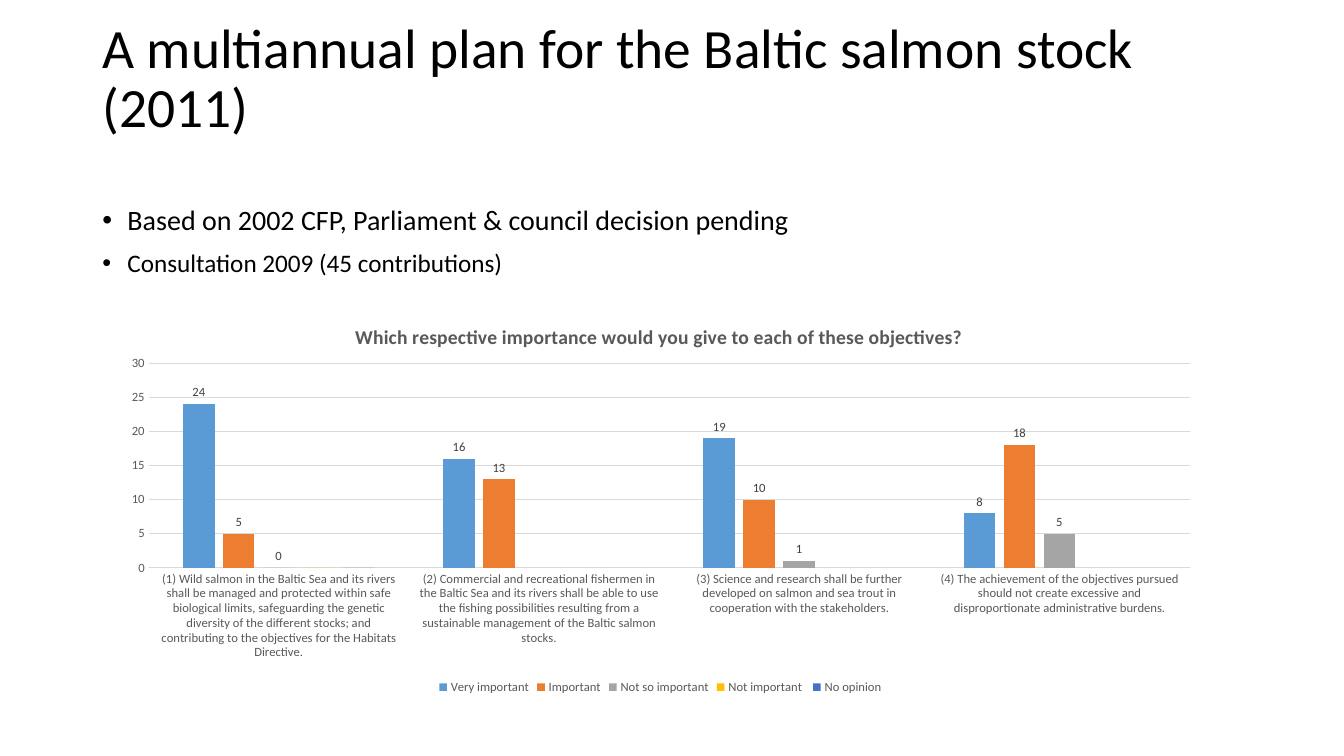
from lxml.etree import SubElement
from pptx import Presentation
from pptx.chart.data import CategoryChartData
from pptx.dml.color import RGBColor
from pptx.enum.chart import XL_CHART_TYPE, XL_LABEL_POSITION, XL_LEGEND_POSITION, XL_TICK_MARK
from pptx.enum.text import MSO_ANCHOR
from pptx.oxml import parse_xml
from pptx.oxml.ns import nsdecls, qn
from pptx.util import Pt

FONT = "Calibri"
BLACK = RGBColor(0x00, 0x00, 0x00)
DARK_GREY = RGBColor(0x40, 0x40, 0x40)
GREY = RGBColor(0x59, 0x59, 0x59)
LIGHT_GREY = RGBColor(0xD9, 0xD9, 0xD9)
BLUE = RGBColor(0x5B, 0x9B, 0xD5)
ORANGE = RGBColor(0xED, 0x7D, 0x31)
SILVER = RGBColor(0xA5, 0xA5, 0xA5)
YELLOW = RGBColor(0xFF, 0xC0, 0x00)
NAVY = RGBColor(0x44, 0x72, 0xC4)

HEADING = "A multiannual plan for the Baltic salmon stock (2011)\v"
POINTS = [
    ("Based on 2002 CFP, Parliament & council decision pending", 20),
    ("Consultation 2009 (45 contributions)", 18),
]
QUESTION = "Which respective importance would you give to each of these objectives?"
OBJECTIVES = [
    "(1) Wild salmon in the Baltic Sea and its rivers shall be managed and protected "
    "within safe biological limits, safeguarding the genetic diversity of the different "
    "stocks; and contributing to the objectives for the Habitats Directive.",
    "(2) Commercial and recreational fishermen in the Baltic Sea and its rivers shall be "
    "able to use the fishing possibilities resulting from a sustainable management of "
    "the Baltic salmon stocks.",
    "(3) Science and research shall be further developed on salmon and sea trout in "
    "cooperation with the stakeholders.",
    "(4) The achievement of the objectives pursued should not create excessive and "
    "disproportionate administrative burdens.",
]
# Answer, votes per objective, colour, whether values are labelled
ANSWERS = [
    ("Very important", (24, 16, 19, 8), BLUE, True),
    ("Important", (5, 13, 10, 18), ORANGE, True),
    ("Not so important", (0, None, 1, 5), SILVER, True),
    ("Not important ", (0, None, None, None), YELLOW, False),
    ("No opinion", (0, None, None, None), NAVY, False),
]


def set_font(font, size, colour, bold=False):
    font.name = FONT
    font.size = Pt(size)
    font.bold = bold
    font.color.rgb = colour


def add_text_frame(slide, box, anchor):
    frame = slide.shapes.add_textbox(*map(Pt, box)).text_frame
    frame.word_wrap = True
    frame.vertical_anchor = anchor
    return frame


def add_heading(slide, box):
    heading = add_text_frame(slide, box, MSO_ANCHOR.MIDDLE).paragraphs[0]
    heading.text = HEADING
    heading.line_spacing = 0.9
    set_font(heading.font, 39.6, BLACK)


def add_points(slide, box):
    frame = add_text_frame(slide, box, MSO_ANCHOR.TOP)
    for index, (wording, size) in enumerate(POINTS):
        point = frame.add_paragraph() if index else frame.paragraphs[0]
        point.text = wording
        point.line_spacing = 0.9
        point.space_before = Pt(10)
        set_font(point.font, size, BLACK)
        # Hanging bullet
        properties = point._p.get_or_add_pPr()
        properties.set("marL", str(Pt(18)))
        properties.set("indent", str(Pt(-18)))
        SubElement(properties, qn("a:buFont")).set("typeface", "Arial")
        SubElement(properties, qn("a:buChar")).set("char", "•")


def place(part, index, target="", **fractions):
    """Give a chart part a fixed place, in fractions of the chart."""
    for layout in part.findall(qn("c:layout")):
        part.remove(layout)
    target = f'<c:layoutTarget val="{target}"/>' if target else ""
    modes = "".join(f'<c:{axis}Mode val="edge"/>' for axis in "xy")
    values = "".join(f'<c:{key} val="{value}"/>' for key, value in fractions.items())
    part.insert(index, parse_xml(
        f'<c:layout {nsdecls("c")}><c:manualLayout>{target}{modes}{values}'
        "</c:manualLayout></c:layout>"))


def style_axes(chart):
    for axis in (chart.category_axis, chart.value_axis):
        axis.major_tick_mark = axis.minor_tick_mark = XL_TICK_MARK.NONE
        set_font(axis.tick_labels.font, 9, GREY)
    votes = chart.value_axis
    votes.minimum_scale, votes.maximum_scale, votes.major_unit = 0, 30, 5
    votes.format.line.fill.background()
    votes.has_major_gridlines = True
    for line in (chart.category_axis.format.line, votes.major_gridlines.format.line):
        line.color.rgb = LIGHT_GREY
        line.width = Pt(0.75)


def style_answers(plot):
    plot.gap_width, plot.overlap = 219, -27
    plot.vary_by_categories = False
    for answer, (_, _, colour, labelled) in zip(plot.series, ANSWERS):
        answer.format.fill.solid()
        answer.format.fill.fore_color.rgb = colour
        answer.invert_if_negative = False
        if labelled:
            labels = answer.data_labels
            labels.show_value = True
            labels.position = XL_LABEL_POSITION.OUTSIDE_END
            set_font(labels.font, 9, DARK_GREY)


def add_survey_chart(slide, box):
    survey = CategoryChartData()
    survey.categories = OBJECTIVES
    for answer, votes, _, _ in ANSWERS:
        survey.add_series(answer, votes)
    chart = slide.shapes.add_chart(
        XL_CHART_TYPE.COLUMN_CLUSTERED, *map(Pt, box), survey).chart
    set_font(chart.font, 10, BLACK)

    # Question above the columns
    chart.has_title = True
    question = chart.chart_title.text_frame.paragraphs[0]
    question.text = QUESTION
    set_font(question.font, 14, GREY, bold=True)
    place(chart.chart_title._element, 1, x=0.22, y=0.05)

    # Columns and axes
    place(chart._chartSpace.chart.plotArea, 0, "inner", x=0.036, y=0.16, w=0.944, h=0.513)
    style_axes(chart)
    style_answers(chart.plots[0])

    # Legend
    chart.has_legend = True
    chart.legend.position = XL_LEGEND_POSITION.BOTTOM
    chart.legend.include_in_layout = False
    set_font(chart.legend.font, 9, GREY)


def main():
    deck = Presentation()
    deck.slide_width, deck.slide_height = Pt(960), Pt(540)
    slide = deck.slides.add_slide(deck.slide_layouts[6])
    add_heading(slide, (66, 28.75, 828, 104.4))
    add_points(slide, (66, 143.75, 828, 342.6))
    add_survey_chart(slide, (77.8, 213.8, 787.7, 285.1))
    deck.save("out.pptx")


if __name__ == "__main__":
    main()
